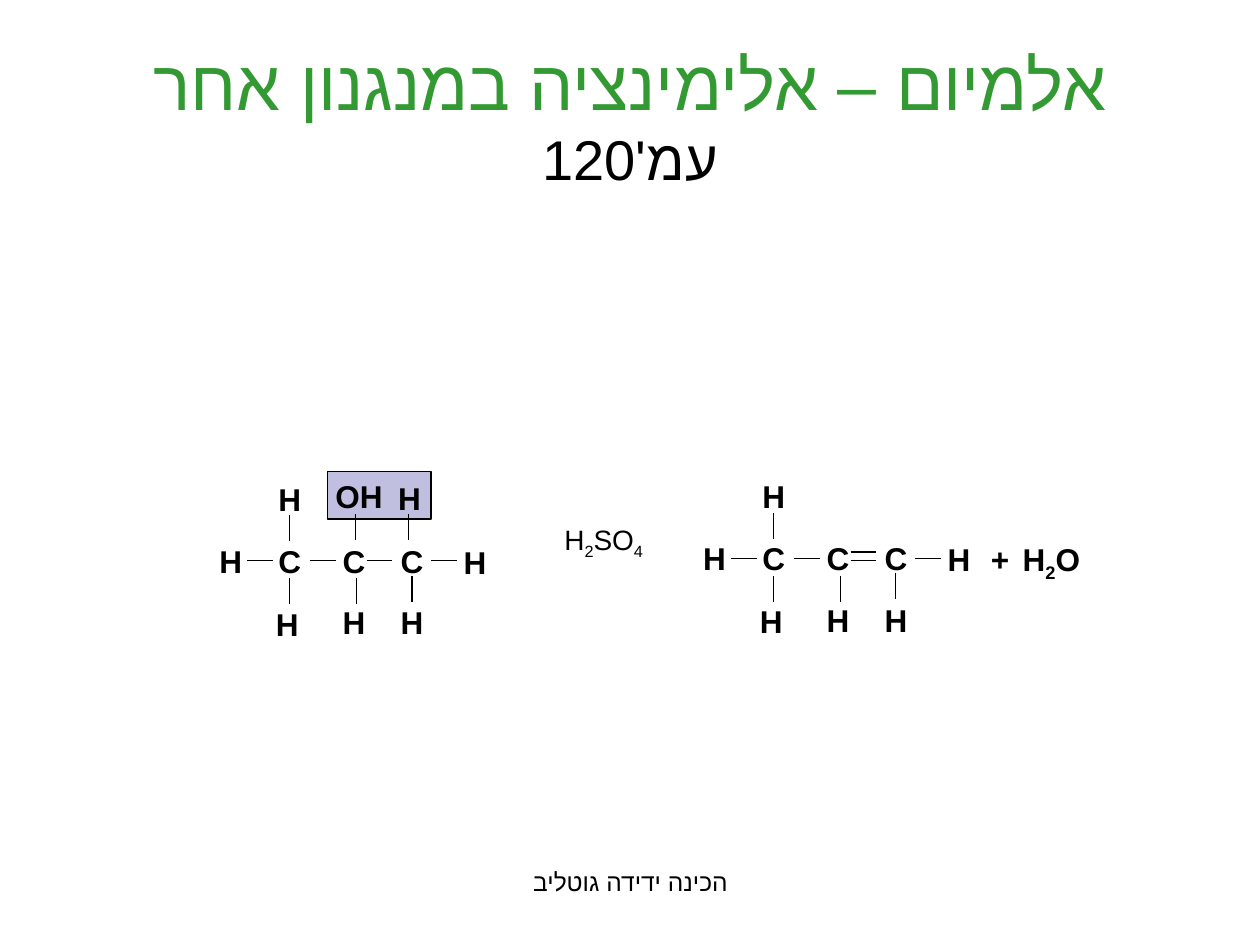
"""Build a slide on the elimination of water from propan-2-ol."""
from dataclasses import dataclass

from lxml.etree import SubElement
from pptx import Presentation
from pptx.dml.color import RGBColor as Color
from pptx.enum.shapes import MSO_CONNECTOR as Connector, MSO_SHAPE as Shape
from pptx.enum.text import MSO_ANCHOR as Anchor, PP_ALIGN as Align
from pptx.oxml.ns import qn
from pptx.util import Inches, Pt


@dataclass(frozen=True)
class Theme:
    font: str = "Arial"
    black: Color = Color(0x00, 0x00, 0x00)
    green: Color = Color(0x33, 0x99, 0x33)
    lilac: Color = Color(0xC1, 0xBF, 0xDF)
    title: int = 40
    subtitle: int = 32
    atom: int = 18
    reagent: int = 16
    footer: int = 14
    line: float = 0.75


theme = Theme()
presentation = Presentation()
presentation.slide_width, presentation.slide_height = Inches(10), Inches(7.5)
slide = presentation.slides.add_slide(presentation.slide_layouts[6])
COLUMN = presentation.slide_width / 100
ROW = presentation.slide_height / 75


def add_text(pieces, left, top, width, height, size, bold=False, align=Align.CENTER):
    box = slide.shapes.add_textbox(
        round(left * COLUMN), round(top * ROW), round(width * COLUMN), round(height * ROW)
    )
    box.text_frame.word_wrap = True
    paragraph = box.text_frame.paragraphs[0]
    paragraph.alignment = align
    paragraph._p.get_or_add_pPr().set("rtl", "1")
    for piece in pieces:
        if piece == "\v":
            paragraph.add_line_break()
            continue
        run = paragraph.add_run()
        run.text = piece
        font = run.font
        font.name, font.size, font.bold = theme.font, Pt(size), bold
        font.color.rgb = theme.black
        SubElement(font._element, qn("a:cs")).set("typeface", theme.font)
        if piece.isdigit():
            font._element.set("baseline", "-25000")
    return box


def add_bond(x1, y1, x2, y2):
    bond = slide.shapes.add_connector(
        Connector.STRAIGHT,
        round(x1 * COLUMN), round(y1 * ROW), round(x2 * COLUMN), round(y2 * ROW),
    )
    bond.line.color.rgb = theme.black
    bond.line.width = Pt(theme.line)
    SubElement(bond._element.spPr, qn("a:effectLst"))


title = add_text(
    ["אלמיום – אלימינציה במנגנון אחר", "\v", "עמ'120"], 5, 3, 90, 12.5, theme.title
)
title.text_frame.vertical_anchor = Anchor.MIDDLE
heading, page = title.text_frame.paragraphs[0].runs
heading.font.color.rgb = theme.green
page.font.size = Pt(theme.subtitle)
add_text(["הכינה ידידה גוטליב"], 34.2, 68.3, 31.7, 5.2, theme.footer)

leaving_group = slide.shapes.add_shape(
    Shape.RECTANGLE,
    round(26 * COLUMN), round(37.4 * ROW), round(8.2 * COLUMN), round(3.8 * ROW),
)
leaving_group.shadow.inherit = False
leaving_group.fill.solid()
leaving_group.fill.fore_color.rgb = theme.lilac
leaving_group.line.color.rgb = theme.black
leaving_group.line.width = Pt(theme.line)

add_text(["H", "2", "SO", "4"], 41.8, 41, 10.2, 3.7, theme.reagent, align=Align.RIGHT)
add_text(["+"], 78.1, 42.4, 3, 4, theme.atom, True, Align.RIGHT)
add_text(["H", "2", "O"], 79.9, 42.4, 6.8, 4, theme.atom, True, Align.RIGHT)

shared_atoms = [
    ("H", 18.3, 44.5), ("C", 23, 44.5), ("C", 28.1, 44.5), ("C", 32.7, 44.5),
    ("H", 37.7, 44.6), ("H", 23, 39.6),
    ("H", 22.8, 49.5), ("H", 28.1, 49.4), ("H", 32.7, 49.4),
]
across, down = (2.05, 0), (0, 2.05)
shared_bonds = [
    (19.6, 44.5, across), (24.6, 44.5, across), (34.2, 44.5, across),
    (23, 40.9, down), (23, 45.9, down), (28.3, 45.9, down), (32.7, 45.7, down),
]
molecules = [
    (0, 0, [("OH", 28.5, 39.4), ("H", 32.5, 39.5)],
     [(29.1, 44.5, across), (28.2, 40.8, down), (32.4, 40.8, down)]),
    (38.4, -0.2, [], [(29.1, 44.7, across), (29.1, 44, across)]),
]
for shift_x, shift_y, extra_atoms, extra_bonds in molecules:
    for x, y, (run_x, run_y) in shared_bonds + extra_bonds:
        x, y = x + shift_x, y + shift_y
        add_bond(x, y, x + run_x, y + run_y)
    for symbol, x, y in shared_atoms + extra_atoms:
        width = 1 + 2.8 * len(symbol)
        add_text(
            [symbol], x + shift_x - width / 2, y + shift_y - 2, width, 4, theme.atom, True
        )

presentation.save("out.pptx")
